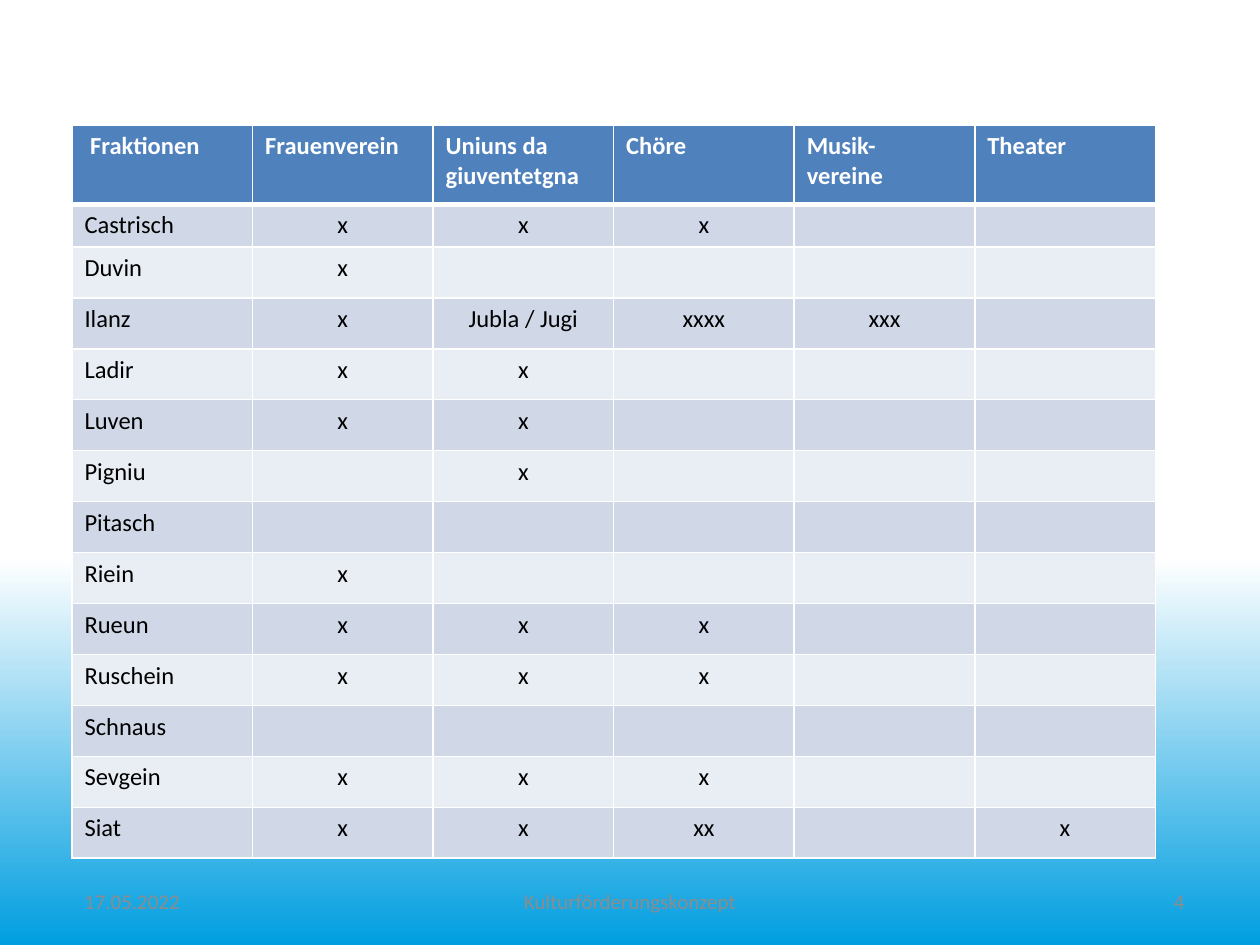
from dataclasses import dataclass

from lxml.etree import SubElement
from pptx import Presentation
from pptx.dml.color import RGBColor
from pptx.enum.text import MSO_ANCHOR, PP_ALIGN
from pptx.oxml.ns import qn
from pptx.util import Pt

FONT = "Calibri"
WHITE, BLACK, GREY = "FFFFFF", "000000", "8C8C8C"
HEAD, BANDS = "4F81BD", ("D0D8E8", "E9EDF4")
LEFT, TOP, COL = 41.1, 71.6, 103.2
HIGH, LOW, ROW = 45.2, 24.3, 29.14

TITLES = (" Fraktionen", "Frauenverein", "Uniuns da\ngiuventetgna",
          "Chöre", "Musik-\nvereine", "Theater")


@dataclass
class Place:
    name: str
    marks: tuple = ()


@dataclass
class Note:
    text: str
    left: float
    width: float
    align: PP_ALIGN


PLACES = (
    Place("Castrisch", ("x", "x", "x")),
    Place("Duvin", ("x",)),
    Place("Ilanz", ("x", "Jubla / Jugi", "xxxx", "xxx")),
    Place("Ladir", ("x", "x")),
    Place("Luven", ("x", "x")),
    Place("Pigniu", ("", "x")),
    Place("Pitasch"),
    Place("Riein", ("x",)),
    Place("Rueun", ("x", "x", "x")),
    Place("Ruschein", ("x", "x", "x")),
    Place("Schnaus"),
    Place("Sevgein", ("x", "x", "x")),
    Place("Siat", ("x", "x", "xx", "", "x")),
)

NOTES = (
    Note("17.05.2022", 41, 168, PP_ALIGN.LEFT),
    Note("Kulturförderungskonzept", 246, 228, PP_ALIGN.CENTER),
    Note("4", 516, 168, PP_ALIGN.RIGHT),
)


def paint(color, code: str) -> None:
    color.rgb = RGBColor.from_string(code)


def write(frame, text: str, size: float, code: str, align, bold=False) -> None:
    """Fill a text frame, one paragraph for each line."""
    for i, line in enumerate(text.split("\n")):
        para = frame.add_paragraph() if i else frame.paragraphs[0]
        para.alignment = align
        if not line:
            # An empty cell still needs its text size to keep the row low
            SubElement(para._p, qn("a:endParaRPr"), sz=str(size * 100))
            continue
        run = para.add_run()
        run.text = line
        font = run.font
        font.name, font.size, font.bold = FONT, Pt(size), bold
        paint(font.color, code)


def edge(cell, side: str, width: float) -> None:
    """Draw one white border of a cell."""
    props = cell._tc.get_or_add_tcPr()
    line = SubElement(props, qn(f"a:ln{side}"), w=str(Pt(width)))
    fill = SubElement(line, qn("a:solidFill"))
    SubElement(fill, qn("a:srgbClr"), val=WHITE)


def draw_cell(cell, row: int, col: int, text: str) -> None:
    for side in "LRTB":
        thick = (row, side) in ((0, "B"), (1, "T"))
        edge(cell, side, 3 if thick else 1)
    cell.fill.solid()
    paint(cell.fill.fore_color, BANDS[(row - 1) % 2] if row else HEAD)
    align = PP_ALIGN.CENTER if row and col else PP_ALIGN.LEFT
    write(cell.text_frame, text, 14, BLACK if row else WHITE, align, not row)


def draw_table(slide) -> None:
    cols = len(TITLES)
    lines = [TITLES]
    for place in PLACES:
        gaps = ("",) * (cols - 1 - len(place.marks))
        lines.append((place.name, *place.marks, *gaps))
    highs = [HIGH, LOW] + [ROW] * (len(lines) - 2)
    table = slide.shapes.add_table(
        len(lines), cols, Pt(LEFT), Pt(TOP), Pt(COL * cols), Pt(sum(highs))).table
    table.horz_banding = False
    for col in table.columns:
        col.width = Pt(COL)
    for r, (line, high) in enumerate(zip(lines, highs)):
        table.rows[r].height = Pt(high)
        for c, text in enumerate(line):
            draw_cell(table.cell(r, c), r, c, text)


def draw_note(slide, note: Note) -> None:
    box = slide.shapes.add_textbox(Pt(note.left), Pt(500.5), Pt(note.width), Pt(28.75))
    frame = box.text_frame
    frame.word_wrap = True
    frame.vertical_anchor = MSO_ANCHOR.MIDDLE
    write(frame, note.text, 12, GREY, note.align)


def draw_back(slide) -> None:
    fill = slide.background.fill
    fill.gradient()
    fill.gradient_angle = 270
    for stop, (place, code) in zip(fill.gradient_stops, ((0.59, WHITE), (1, "009EE0"))):
        stop.position = place
        paint(stop.color, code)


def main() -> None:
    deck = Presentation()
    deck.slide_width, deck.slide_height = Pt(720), Pt(540)
    slide = deck.slides.add_slide(deck.slide_layouts[6])
    # Background
    draw_back(slide)
    # Clubs by village
    draw_table(slide)
    # Footer
    for note in NOTES:
        draw_note(slide, note)
    deck.save("out.pptx")


if __name__ == "__main__":
    main()
